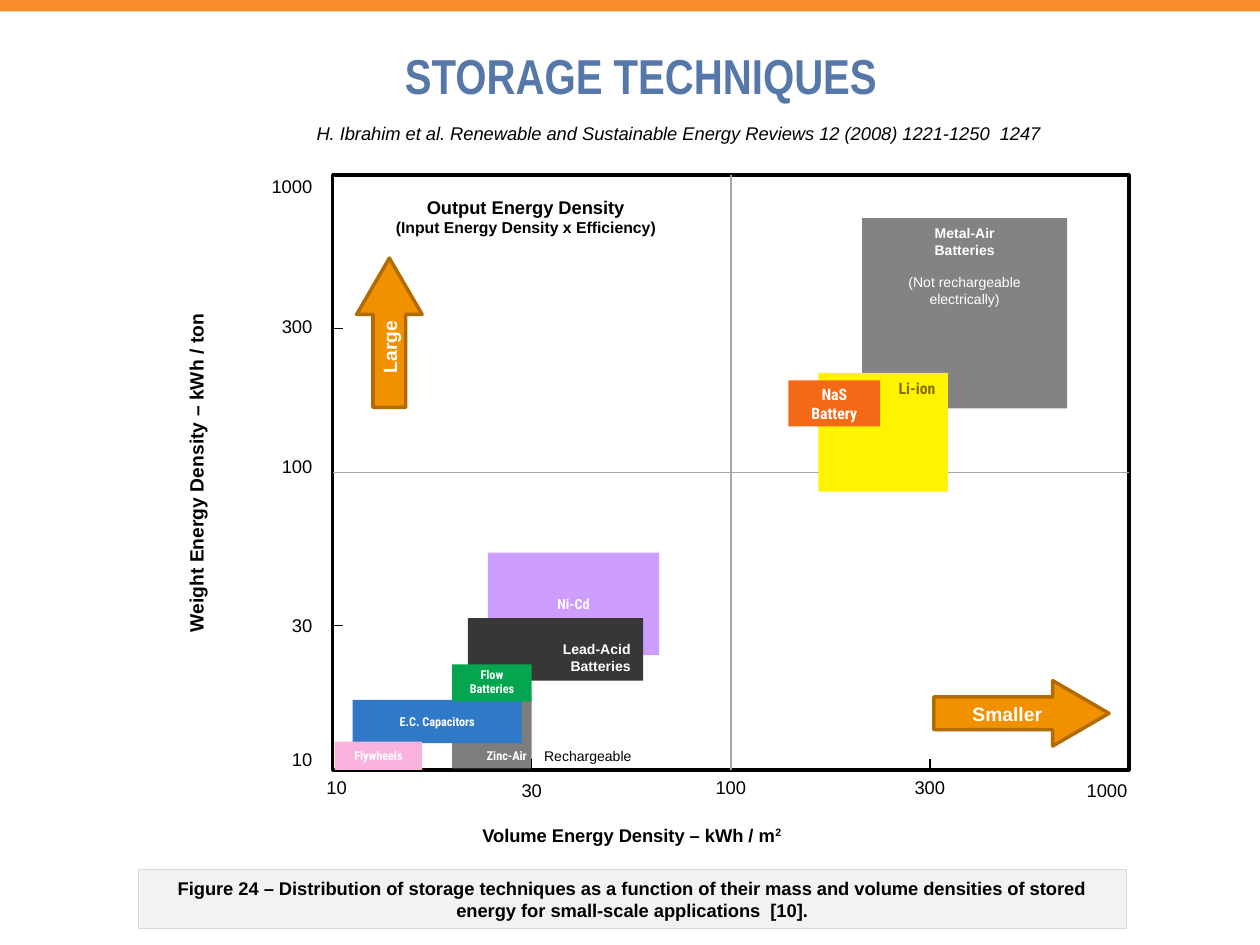
from dataclasses import dataclass

from lxml import etree
from pptx import Presentation
from pptx import util as u
from pptx.dml.color import RGBColor
from pptx.enum import shapes, text
from pptx.oxml.ns import qn

RECT = shapes.MSO_SHAPE.RECTANGLE
ARROW = shapes.MSO_SHAPE.RIGHT_ARROW
LEFT, MID, RIGHT = text.PP_ALIGN.LEFT, text.PP_ALIGN.CENTER, text.PP_ALIGN.RIGHT
TOP, CORE, BASE = (text.MSO_ANCHOR.TOP, text.MSO_ANCHOR.MIDDLE,
                   text.MSO_ANCHOR.BOTTOM)


@dataclass(frozen=True)
class Theme:
    sans: str = "Arial"
    slim: str = "Roboto Condensed"
    head: str = "Arial Narrow"
    ink: str = "000000"
    white: str = "FFFFFF"
    title: str = "5678A9"
    band: str = "F88D2C"
    panel: str = "F2F2F2"
    rim: str = "D9D9D9"
    grid: str = "A6A6A6"
    arrow: str = "F19100"
    edge: str = "B26B00"
    lithium: str = "806B00"
    huge: float = 28
    big: float = 11
    body: float = 10.5
    note: float = 9
    small: float = 8
    tiny: float = 7


T = Theme()
WIDE, HIGH = 10, 7.5
# The plot is a grid of four columns and four rows.
COL, ROW = 1.58, 1.18
X0, Y0 = 2.64, 1.39


def share(left, top, wide, high):
    """Turn percentages of the slide into lengths."""
    return [u.Inches(part * size / 100) for part, size in
            zip((left, top, wide, high), (WIDE, HIGH, WIDE, HIGH))]


def cell(col, row, wide, high):
    """Turn columns and rows of the plot into lengths."""
    return [u.Inches(n) for n in
            (X0 + col * COL, Y0 + row * ROW, wide * COL, high * ROW)]


def style(size=T.body, face=T.sans, color=T.ink, bold=False, italic=False):
    return dict(size=size, face=face, color=color, bold=bold, italic=italic)


def write(frame, paras, look, align=MID, anchor=TOP, inset=None):
    """Fill a frame; a paragraph is a string or a list of (text, changes)."""
    frame.vertical_anchor = anchor
    if inset is not None:
        frame.margin_left = frame.margin_right = u.Inches(inset)
        frame.margin_top = frame.margin_bottom = u.Inches(inset)
    for i, para in enumerate(paras):
        p = frame.paragraphs[0] if i == 0 else frame.add_paragraph()
        p.alignment = align
        for words, change in [(para, {})] if isinstance(para, str) else para:
            run, now = p.add_run(), {**look, **change}
            run.text = words
            font = run.font
            font.name, font.size = now["face"], u.Pt(now["size"])
            font.bold, font.italic = now["bold"], now["italic"]
            font.color.rgb = RGBColor.from_string(now["color"])
            if "raised" in now:
                run._r.get_or_add_rPr().set("baseline", str(now["raised"]))


def block(slide, area, fill=None, line=None, width=1, kind=RECT):
    shape = slide.shapes.add_shape(kind, *area)
    shape.shadow.inherit = False
    if fill:
        shape.fill.solid()
        shape.fill.fore_color.rgb = RGBColor.from_string(fill)
    else:
        shape.fill.background()
    if line:
        shape.line.color.rgb = RGBColor.from_string(line)
        shape.line.width = u.Pt(width)
    else:
        shape.line.fill.background()
    return shape


def label(slide, area, paras, look, align=MID, wrap=False):
    box = slide.shapes.add_textbox(*area)
    box.text_frame.word_wrap = wrap
    box.text_frame.auto_size = text.MSO_AUTO_SIZE.SHAPE_TO_FIT_TEXT
    write(box.text_frame, paras, look, align)
    return box


def rule(slide, start, end, color=T.ink, width=0.75):
    """Draw a line between two (column, row) points of the plot."""
    ends = cell(*start, 0, 0)[:2] + cell(*end, 0, 0)[:2]
    line = slide.shapes.add_connector(shapes.MSO_CONNECTOR.STRAIGHT, *ends)
    line.line.color.rgb = RGBColor.from_string(color)
    line.line.width = u.Pt(width)
    etree.SubElement(line._element.spPr, qn("a:effectLst"))
    return line


def arrow(slide, area, word, turn=0):
    shape = block(slide, area, T.arrow, T.edge, 2, ARROW)
    shape.adjustments[0], shape.adjustments[1] = 0.5, 0.86
    shape.rotation = turn
    write(shape.text_frame, [word], style(T.big, color=T.white, bold=True),
          anchor=CORE)


def heading(slide):
    title = slide.shapes.title
    title.left, title.top, title.width, title.height = share(5.9, 5.87, 89.9, 7.33)
    frame = title.text_frame
    frame.auto_size = text.MSO_AUTO_SIZE.NONE
    write(frame, ["STORAGE TECHNIQUES"],
          style(T.huge, T.head, T.title, bold=True), inset=0)
    frame.paragraphs[0].line_spacing = u.Pt(T.huge)
    block(slide, share(0, -0.13, 100, 1.33), T.band)
    label(slide, share(17.7, 12.27, 72.4, 3.87),
          ["H. Ibrahim et al. Renewable and Sustainable Energy Reviews 12 "
           "(2008) 1221-1250  1247"], style(italic=True), wrap=True)


def frame_plot(slide):
    plot = block(slide, cell(0, 0, 4, 4), line=T.ink, width=2)
    for start, end, width in (((0, 0), (0, 4), 1.5), ((0, 4), (3, 4), 1.25),
                              ((3, 0), (0, 0), 1.5)):
        rule(slide, start, end, width=width)
    for start, end, first, last in (((4, 2), (0, 2), 3, 1),
                                    ((2, 0), (2, 4), 0, 2)):
        line = rule(slide, start, end, T.grid, 1)
        line.begin_connect(plot, first)
        line.end_connect(plot, last)


def scales(slide):
    for col in (1, 3):
        rule(slide, (col, 3.93), (col, 4))
    for row in (1.03, 3.03):
        rule(slide, (0.05, row), (0, row))
    high = 0.24
    marks = ("10", "30", "100", "300", "1000")
    cols, rows = (0.02, 1, 2, 3, 3.89), (3.93, 3.03, 1.96, 1.02, 0.08)
    for mark, col, row in zip(marks, cols, rows):
        wide = 0.13 + 0.05 * len(mark)
        drop = 4.02 if mark in ("30", "1000") else 4
        label(slide, cell(col - wide / 2, drop, wide, high), [mark], style())
        label(slide, cell(-0.04 - wide, row - high / 2, wide, high), [mark],
              style(), RIGHT)
    side = label(slide, share(-8, 48.13, 47.2, 3.87),
                 ["Weight Energy Density – kWh / ton"],
                 style(T.big, bold=True), wrap=True)
    side.rotation = 270
    label(slide, share(37, 86.53, 26.3, 3.73),
          [[("Volume Energy Density – kWh / m", {}), ("2", {"raised": 30000})]],
          style(bold=True))


def stores(slide):
    plain = style(T.small, color=T.white, bold=True)
    slim, tiny, note = ({**plain, "face": T.slim, "size": size}
                        for size in (T.small, T.tiny, T.note))
    metal = ["Metal-Air", "Batteries",
             [("(Not rechargeable electrically)", {"bold": False})]]
    items = (
        ((0.78, 2.54, 0.86, 0.69), "CE9EFF", ["Ni-Cd"], slim, MID, CORE, None),
        ((0.68, 2.98, 0.88, 0.42), "373736", ["Lead-Acid", "Batteries"],
         plain, RIGHT, BASE, None),
        ((0.6, 3.53, 0.4, 0.46), "7D7D7D", ["Zinc-Air"], tiny, RIGHT, BASE, 0.04),
        ((0.1, 3.53, 0.85, 0.29), "3079C7", ["E.C. Capacitors"],
         tiny, MID, CORE, None),
        ((0.6, 3.29, 0.4, 0.25), "03A64E", ["Flow Batteries"],
         tiny, MID, BASE, 0.04),
        ((2.66, 0.29, 1.03, 1.28), "838383", metal, plain, MID, TOP, None),
        ((0.01, 3.81, 0.44, 0.19), "FAB3DD", ["Flywheels"], tiny, MID, CORE, 0.04),
        ((2.44, 1.33, 0.65, 0.8), "FFF300", ["Li-ion"],
         {**note, "color": T.lithium}, RIGHT, TOP, None),
        ((2.29, 1.38, 0.46, 0.31), "F46916", ["NaS", "Battery"],
         note, MID, CORE, None),
    )
    for area, fill, paras, look, align, anchor, inset in items:
        shape = block(slide, cell(*area), fill)
        write(shape.text_frame, paras, look, align, anchor, inset)
        if paras is metal:
            shape.text_frame.paragraphs[-1].space_before = u.Pt(T.note)


def notes(slide):
    label(slide, cell(0.25, 0.1, 1.44, 0.36),
          ["Output Energy Density",
           [("(Input Energy Density x Efficiency)", {"size": T.note})]],
          style(bold=True))
    label(slide, cell(1, 3.81, 0.57, 0.2), ["Rechargeable"], style(T.small), LEFT)
    arrow(slide, cell(3.02, 3.4, 0.88, 0.44), "Smaller")
    arrow(slide, cell(-0.09, 0.84, 0.75, 0.44), "Large", 270)
    box = block(slide, share(11, 92, 78.4, 6.27), T.panel, T.rim, 0.75)
    write(box.text_frame,
          ["Figure 24 – Distribution of storage techniques as a function of "
           "their mass and volume densities of stored energy for small-scale "
           "applications  [10]."], style(bold=True), anchor=CORE)


def main():
    deck = Presentation()
    deck.slide_width, deck.slide_height = u.Inches(WIDE), u.Inches(HIGH)
    slide = deck.slides.add_slide(deck.slide_layouts[5])
    for part in (heading, frame_plot, stores, scales, notes):
        part(slide)
    deck.save("out.pptx")


if __name__ == "__main__":
    main()
